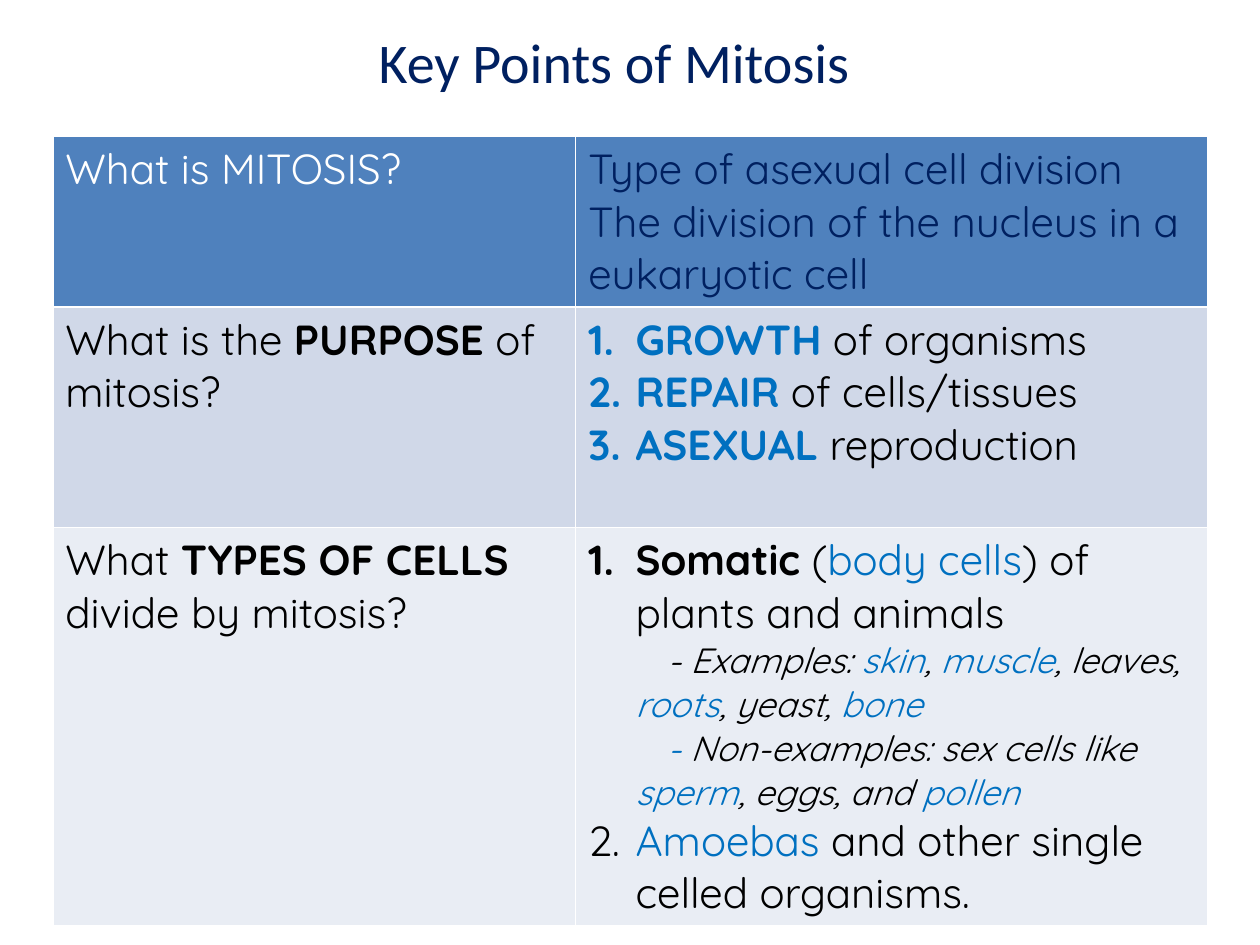
from dataclasses import dataclass

from lxml import etree
from pptx import Presentation
from pptx.dml.color import RGBColor
from pptx.enum.text import MSO_ANCHOR, PP_ALIGN
from pptx.oxml.ns import qn
from pptx.util import Pt

CENTER = PP_ALIGN.CENTER
MIDDLE = MSO_ANCHOR.MIDDLE
TITLE_FONT, BODY_FONT = "Calibri", "Quicksand"
COLORS = {
    "white": "FFFFFF", "black": "000000", "navy": "002060", "blue": "0070C0",
    "header": "4F81BD", "band_dark": "D0D8E8", "band_light": "E9EDF4",
}
COL_WIDTHS = (298.8, 361.4)
ROW_HEIGHTS = (96, 126, 218.2)
ROW_FILLS = ("header", "band_dark", "band_light")
HANG = 27


@dataclass
class Span:
    text: str
    color: str = "black"
    bold: bool = False


@dataclass
class Para:
    spans: list[Span]
    number: int = 0
    margin: float = 0
    indent: float = 0
    size: float = 24
    italic: bool = False


def rgb(name: str) -> RGBColor:
    return RGBColor.from_string(COLORS[name])


def key(text: str, bold: bool = False) -> Span:
    return Span(text, "blue", bold)


def numbered(number: int, *spans: Span) -> Para:
    return Para(list(spans), number, HANG, -HANG)


def example(*spans: Span) -> Para:
    return Para(list(spans), margin=HANG, indent=18, size=20, italic=True)


def add_color(parent, tag: str, color: str) -> None:
    el = etree.SubElement(parent, qn(tag))
    etree.SubElement(el, qn("a:srgbClr"), val=COLORS[color])


def set_borders(cell, color: str, width: float) -> None:
    tc_pr = cell._tc.get_or_add_tcPr()
    for side in "LRTB":
        ln = etree.SubElement(tc_pr, qn(f"a:ln{side}"), w=str(Pt(width)))
        add_color(ln, "a:solidFill", color)


def write_para(p, para: Para) -> None:
    p_pr = p._p.get_or_add_pPr()
    p_pr.set("marL", str(Pt(para.margin)))
    p_pr.set("indent", str(Pt(para.indent)))
    if para.number:
        bullet_color = para.spans[0].color if para.spans[0].bold else "black"
        add_color(p_pr, "a:buClr", bullet_color)
        etree.SubElement(p_pr, qn("a:buAutoNum"), type="arabicPeriod",
                         startAt=str(para.number))
    for span in para.spans:
        r = p.add_run()
        r.text = span.text
        r.font.name = BODY_FONT
        r.font.size = Pt(para.size)
        r.font.bold = span.bold
        r.font.italic = para.italic
        r.font.color.rgb = rgb(span.color)


def fill_cell(cell, paras: list[Para], fill: str) -> None:
    set_borders(cell, "white", 1)
    cell.fill.solid()
    cell.fill.fore_color.rgb = rgb(fill)
    tf = cell.text_frame
    for i, para in enumerate(paras):
        write_para(tf.add_paragraph() if i else tf.paragraphs[0], para)


# Question in the left column, answer in the right
purposes = (("GROWTH", " of organisms"), ("REPAIR", " of cells/tissues"),
            ("ASEXUAL", " reproduction"))
ROWS = [
    ([Para([Span("What is MITOSIS?", "white")])],
     [Para([Span("Type of asexual cell division", "navy")]),
      Para([Span("The division of the nucleus in a eukaryotic cell", "navy")])]),
    ([Para([Span("What is the "), Span("PURPOSE", bold=True), Span(" of mitosis?")])],
     [numbered(n, key(word, True), Span(rest))
      for n, (word, rest) in enumerate(purposes, 1)]),
    ([Para([Span("What "), Span("TYPES OF CELLS ", bold=True),
            Span("divide by mitosis?")])],
     [numbered(1, Span("Somatic", bold=True), Span(" ("), key("body cells"),
               Span(") of plants and animals")),
      example(Span("- Examples: "), key("skin"), Span(", "), key("muscle"),
              Span(", leaves, "), key("roots"), Span(", yeast, "), key("bone")),
      example(key("- "), Span("Non-examples: sex cells like "), key("sperm"),
              Span(", eggs, and "), key("pollen")),
      numbered(2, key("Amoebas"), Span(" and other single celled organisms."))]),
]


def main() -> None:
    prs = Presentation()
    prs.slide_width, prs.slide_height = Pt(720), Pt(540)
    s = prs.slides.add_slide(prs.slide_layouts[5])

    # Title
    title = s.shapes.title
    title.left, title.top, title.width, title.height = Pt(78), Pt(12), Pt(546), Pt(46)
    tf = title.text_frame
    tf.text = "Key Points of Mitosis"
    tf.vertical_anchor = MIDDLE
    p = tf.paragraphs[0]
    p.alignment = CENTER
    font = p.runs[0].font
    font.name, font.size = TITLE_FONT, Pt(32)
    font.color.rgb = rgb("navy")

    # Question and answer table
    table = s.shapes.add_table(len(ROWS), len(COL_WIDTHS), Pt(30.2), Pt(78),
                               Pt(sum(COL_WIDTHS)), Pt(sum(ROW_HEIGHTS))).table
    for column, width in zip(table.columns, COL_WIDTHS):
        column.width = Pt(width)
    for row, height, fill, contents in zip(table.rows, ROW_HEIGHTS, ROW_FILLS, ROWS):
        row.height = Pt(height)
        for cell, paras in zip(row.cells, contents):
            fill_cell(cell, paras, fill)

    prs.save("out.pptx")


if __name__ == "__main__":
    main()
